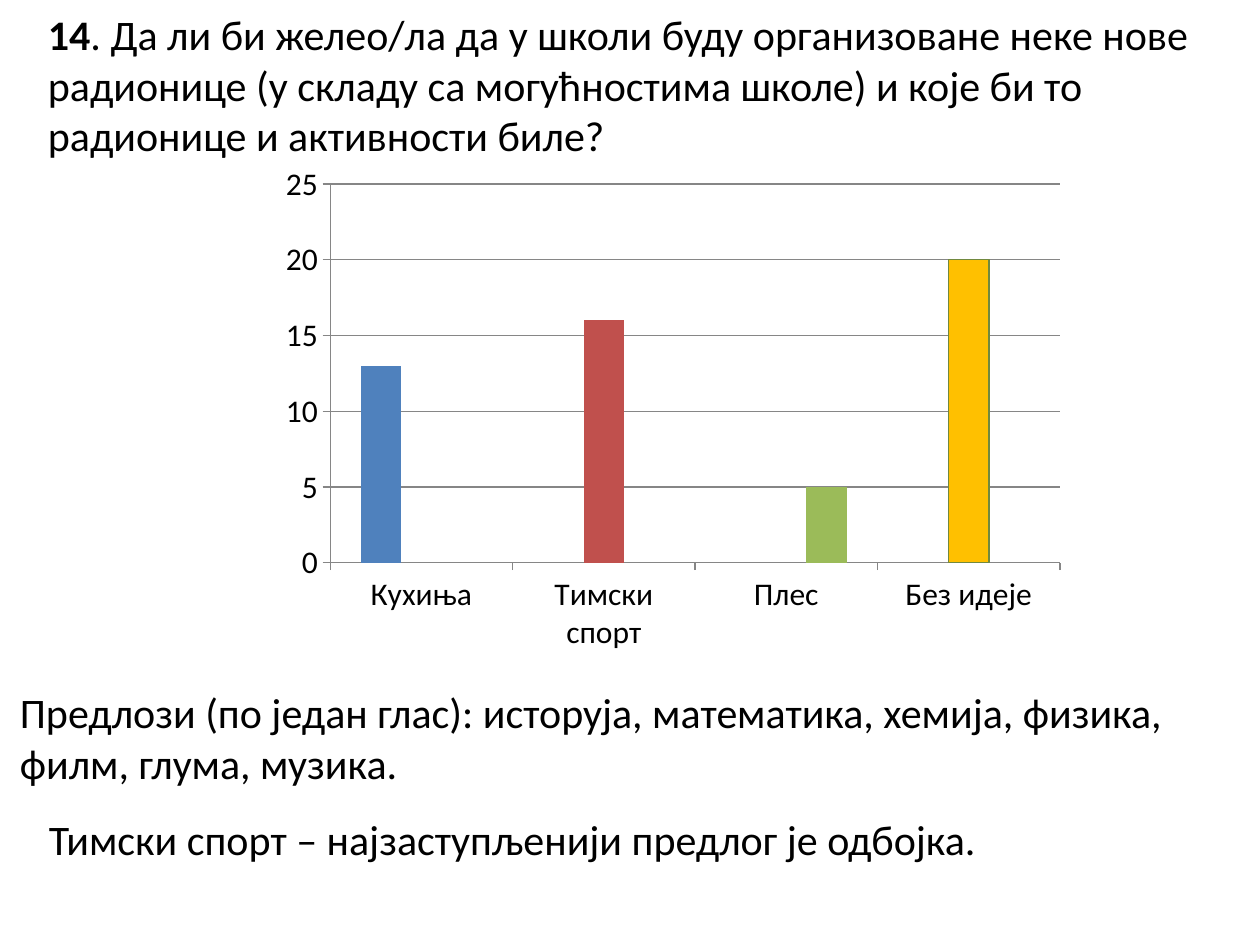
from pptx import Presentation
from pptx.chart.data import CategoryChartData
from pptx.dml.color import RGBColor
from pptx.enum.chart import XL_CHART_TYPE, XL_TICK_MARK
from pptx.enum.text import MSO_ANCHOR, MSO_AUTO_SIZE, PP_ALIGN
from pptx.util import Inches, Pt

COLUMN = XL_CHART_TYPE.COLUMN_CLUSTERED
OUT, NONE = XL_TICK_MARK.OUTSIDE, XL_TICK_MARK.NONE
TOP = MSO_ANCHOR.TOP
FIXED, GROW = MSO_AUTO_SIZE.NONE, MSO_AUTO_SIZE.SHAPE_TO_FIT_TEXT
LEFT = PP_ALIGN.LEFT

FONT = "Calibri"
COLORS = {
    "text": "000000",
    "grid": "868686",
    "blue": "4F81BD",
    "red": "C0504D",
    "green": "9BBB59",
    "gold": "FFC000",
    "edge": "71893F",
}
CATS = ["Кухиња", "Тимски спорт", "Плес", "Без идеје"]
SERIES = [
    ("Series 1", [13, None, None, None], "blue"),
    ("Series 2", [None, 16, None, 20], "red"),
    ("Series 3", [None, None, 5, None], "green"),
]
QUERY = [
    ("14", True),
    (". Да ли би желео/ла да у школи буду организоване неке нове радионице "
     "(у складу са могућностима школе) и које би то радионице и активности "
     "биле?", False),
]
IDEAS = [
    "Предлози (по један глас): исторуја, математика, хемија, физика,",
    "филм, глума, музика.",
]
SPORT = ["Тимски спорт – најзаступљенији предлог је одбојка."]


def color(key):
    """Return the named colour."""
    return RGBColor.from_string(COLORS[key])


def style(font, size, bold=False):
    """Set the face, size, weight and colour of a font."""
    font.name, font.size, font.bold = FONT, Pt(size), bold
    font.color.rgb = color("text")


def add_run(para, text, bold=False):
    """Add one styled run to a left-aligned paragraph."""
    para.alignment = LEFT
    run = para.add_run()
    run.text = text
    style(run.font, 24, bold)


def add_title(slide, box):
    """Place the survey question in the title placeholder."""
    title = slide.shapes.title
    title.left, title.top, title.width, title.height = map(Inches, box)
    frame = title.text_frame
    frame.word_wrap, frame.auto_size = True, FIXED
    frame.vertical_anchor = TOP
    for text, bold in QUERY:
        add_run(frame.paragraphs[0], text, bold)


def add_note(slide, box, lines):
    """Place a text box with one paragraph for each line."""
    frame = slide.shapes.add_textbox(*map(Inches, box)).text_frame
    frame.word_wrap, frame.auto_size = False, GROW
    for i, line in enumerate(lines):
        para = frame.add_paragraph() if i else frame.paragraphs[0]
        add_run(para, line)


def add_bars(slide, box):
    """Place the column chart of the votes."""
    data = CategoryChartData()
    data.categories = CATS
    for name, votes, _ in SERIES:
        data.add_series(name, votes)
    chart = slide.shapes.add_chart(COLUMN, *map(Inches, box), data).chart
    chart.has_legend = chart.has_title = False
    style(chart.font, 18)

    plot = chart.plots[0]
    plot.gap_width, plot.overlap = 150, 0
    plot.vary_by_categories = False
    for bars, (_, _, key) in zip(plot.series, SERIES):
        bars.format.fill.solid()
        bars.format.fill.fore_color.rgb = color(key)
    last = plot.series[1].points[3].format
    last.fill.solid()
    last.fill.fore_color.rgb = color("gold")
    last.line.color.rgb = color("edge")
    last.line.width = Pt(0.75)

    axis = chart.value_axis
    axis.minimum_scale, axis.maximum_scale, axis.major_unit = 0, 25, 5
    axis.has_major_gridlines = True
    for part in (axis, chart.category_axis):
        part.major_tick_mark, part.minor_tick_mark = OUT, NONE
    for part in (axis, chart.category_axis, axis.major_gridlines):
        part.format.line.color.rgb = color("grid")
        part.format.line.width = Pt(0.75)


def main():
    """Build and save the slide."""
    prs = Presentation()
    prs.slide_width, prs.slide_height = Inches(10), Inches(7.5)
    slide = prs.slides.add_slide(prs.slide_layouts[5])
    add_title(slide, (0.28, 0.02, 9.72, 1.53))
    add_bars(slide, (2.14, 1.23, 6.4, 4.02))
    add_note(slide, (0.06, 5.4, 9.43, 0.91), IDEAS)
    add_note(slide, (0.29, 6.41, 7.63, 0.5), SPORT)
    prs.save("out.pptx")


if __name__ == "__main__":
    main()
